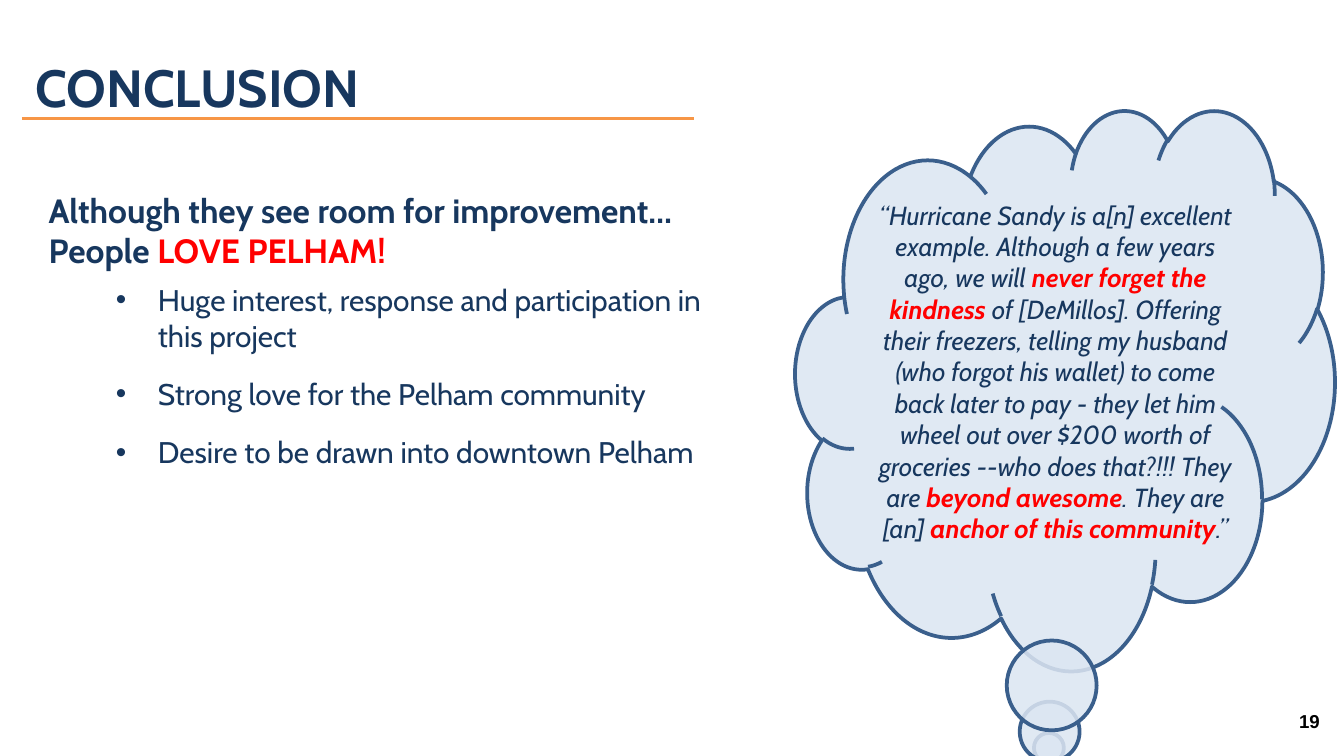
from lxml.etree import SubElement
from pptx import Presentation
from pptx.dml.color import RGBColor
from pptx.enum.shapes import MSO_CONNECTOR, MSO_SHAPE
from pptx.enum.text import MSO_ANCHOR, MSO_AUTO_SIZE, PP_ALIGN
from pptx.oxml.ns import qn
from pptx.util import Pt

PX = 5715
NAVY = RGBColor(0x17, 0x37, 0x5E)
RED = RGBColor(0xFF, 0x00, 0x00)
BLACK = RGBColor(0x00, 0x00, 0x00)
ORANGE = RGBColor(0xF7, 0x96, 0x46)
CLOUD_FILL = RGBColor(0xDC, 0xE6, 0xF2)
CLOUD_LINE = RGBColor(0x3A, 0x5F, 0x8C)

TITLE = {"name": "Cabin", "size": Pt(28), "bold": True}
LEAD = {"name": "Cabin", "size": Pt(18), "bold": True}
POINT = {"name": "Cabin", "size": Pt(16), "bold": False}
QUOTE = {"name": "Cabin", "size": Pt(14), "bold": False, "italic": True}
STRONG = {**QUOTE, "bold": True}
NUMBER = {"name": "Arial", "size": Pt(10), "bold": True}

LEADS = [
    [("Although they see room for improvement…", LEAD, NAVY)],
    [("People ", LEAD, NAVY), ("LOVE PELHAM!", LEAD, RED)],
]
POINTS = [
    "Huge interest, response and participation in this project",
    "Strong love for the Pelham community",
    "Desire to be drawn into downtown Pelham",
]
QUOTE_RUNS = [
    ("“Hurricane Sandy is a[n] excellent example. Although a few years ago, we will ", QUOTE, NAVY),
    ("never forget the kindness", STRONG, RED),
    (" of [DeMillos]. Offering their freezers, telling my husband (who forgot his wallet) "
     "to come back later to pay - they let him wheel out over $200 worth of groceries "
     "--who does that?!!! They are ", QUOTE, NAVY),
    ("beyond awesome", STRONG, RED),
    (". They are [an] ", QUOTE, NAVY),
    ("anchor of this community", STRONG, RED),
    (".”", QUOTE, NAVY),
]


def px(*lengths):
    """Turn px lengths into EMU."""
    return [n * PX for n in lengths]


def place(sp, *box):
    """Move and size a shape to a px box."""
    for name, value in zip(("left", "top", "width", "height"), px(*box)):
        setattr(sp, name, value)


def format_frame(tf, anchor):
    """Wrap the text and fix its anchor."""
    values = {"word_wrap": True, "auto_size": MSO_AUTO_SIZE.NONE, "vertical_anchor": anchor}
    for name, value in values.items():
        setattr(tf, name, value)


def write(p, runs, align=PP_ALIGN.LEFT, space=0):
    """Fill a paragraph with formatted runs."""
    values = {"alignment": align, "space_before": Pt(space), "space_after": Pt(space)}
    for name, value in values.items():
        setattr(p, name, value)
    for text, style, color in runs:
        r = p.add_run()
        r.text = text
        for name, value in style.items():
            setattr(r.font, name, value)
        r.font.color.rgb = color


def set_bullet(p, char=None, margin=0, indent=0):
    """Give a paragraph its indents and a bullet or none."""
    pPr = p._p.get_or_add_pPr()
    pPr.set("marL", str(margin * PX))
    pPr.set("indent", str(indent * PX))
    if char:
        SubElement(pPr, qn("a:buFont"), typeface="Arial")
        SubElement(pPr, qn("a:buChar"), char=char)
    else:
        SubElement(pPr, qn("a:buNone"))


def add_title(s, text):
    """Place the slide title."""
    sp = s.shapes.title
    place(sp, 26, 37, 1544, 133)
    format_frame(sp.text_frame, MSO_ANCHOR.MIDDLE)
    write(sp.text_frame.paragraphs[0], [(text, TITLE, NAVY)])


def add_body(s):
    """Place the lead lines and the bulleted points."""
    sp = s.placeholders[1]
    place(sp, 42, 218, 866, 423)
    tf = sp.text_frame
    format_frame(tf, MSO_ANCHOR.TOP)
    for i, runs in enumerate(LEADS):
        p = tf.add_paragraph() if i else tf.paragraphs[0]
        write(p, runs)
        set_bullet(p)
    for text in POINTS:
        p = tf.add_paragraph()
        p.level = 1
        write(p, [(text, POINT, NAVY)], space=6)
        set_bullet(p, "•", 130, -50)


def add_cloud(s):
    """Draw the translucent thought cloud."""
    sp = s.shapes.add_shape(MSO_SHAPE.CLOUD_CALLOUT, *px(947, 130, 642, 667))
    sp.adjustments[0], sp.adjustments[1] = -0.03, 0.64
    sp.shadow.inherit = False
    sp.fill.solid()
    sp.fill.fore_color.rgb = CLOUD_FILL
    color = sp._element.spPr.find(qn("a:solidFill")).find(qn("a:srgbClr"))
    SubElement(color, qn("a:alpha"), val="86000")
    sp.line.color.rgb = CLOUD_LINE
    sp.line.width = Pt(2)


def add_text(s, box, runs, align, anchor=MSO_ANCHOR.TOP):
    """Add a text box with one paragraph."""
    tf = s.shapes.add_textbox(*px(*box)).text_frame
    format_frame(tf, anchor)
    write(tf.paragraphs[0], runs, align)


def add_rule(s):
    """Draw the line under the title."""
    line = s.shapes.add_connector(MSO_CONNECTOR.STRAIGHT, *px(26, 141, 826, 141))
    line.line.color.rgb = ORANGE
    line.line.width = Pt(1.25)
    SubElement(line._element.spPr, qn("a:effectLst"))


def main():
    """Build and save the slide."""
    prs = Presentation()
    prs.slide_width, prs.slide_height = px(1600, 900)
    s = prs.slides.add_slide(prs.slide_layouts[1])
    add_cloud(s)
    add_text(s, (1214, 834, 373, 48), [("19", NUMBER, BLACK)], PP_ALIGN.RIGHT, MSO_ANCHOR.MIDDLE)
    add_title(s, "CONCLUSION")
    add_body(s)
    add_text(s, (1027, 229, 459, 430), QUOTE_RUNS, PP_ALIGN.CENTER)
    add_rule(s)
    prs.save("out.pptx")


if __name__ == "__main__":
    main()
